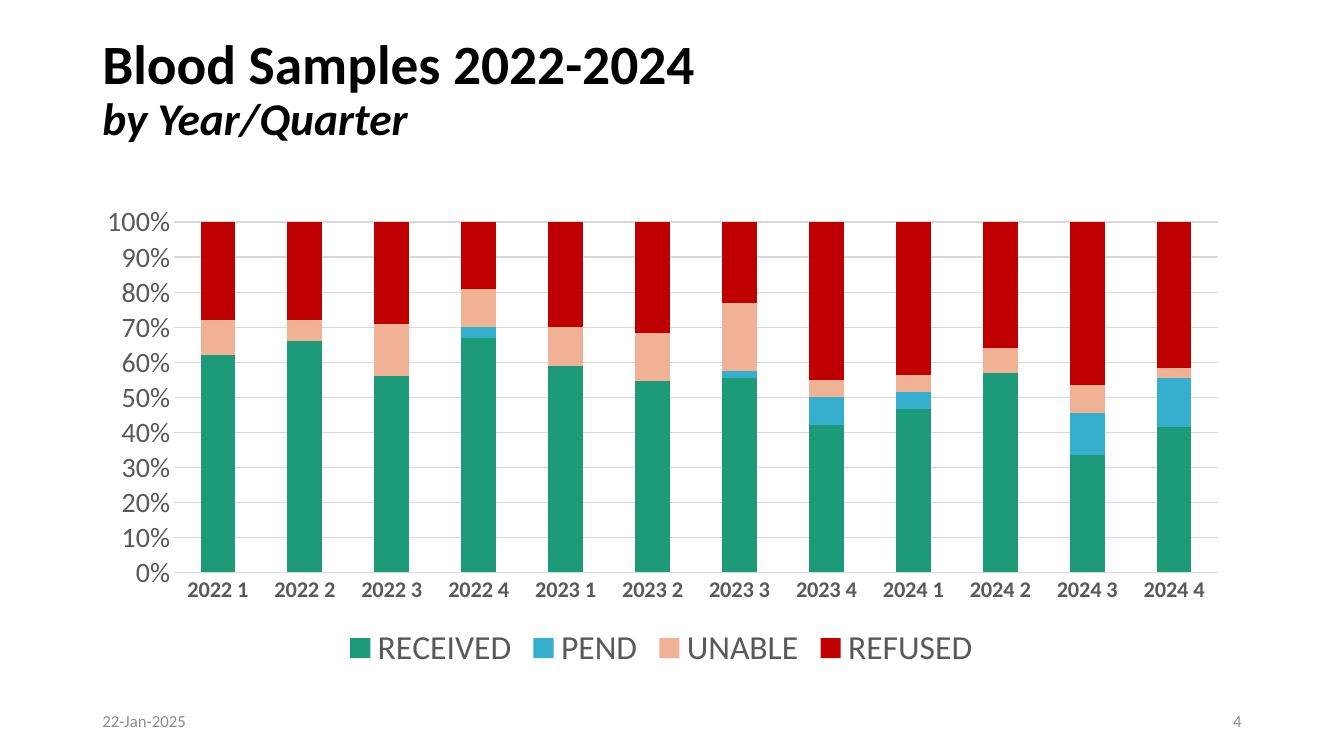
import pptx
import pptx.chart.data
import pptx.dml.color
import pptx.enum.chart
import pptx.enum.text
import pptx.oxml
import pptx.oxml.ns
import pptx.util
from pptx.util import Cm

FACE = "Calibri"
GREY = "595959"
RULE = "D9D9D9"


def paint(code):
    return pptx.dml.color.RGBColor.from_string(code)


def write(slide, box, runs, color="8C8C8C", bold=False, align="LEFT", space=1.0):
    """Add a text box; runs are (text, size, italic), one line each."""
    frame = slide.shapes.add_textbox(*[Cm(n) for n in box]).text_frame
    frame.word_wrap = True
    frame.vertical_anchor = pptx.enum.text.MSO_ANCHOR.MIDDLE
    para = frame.paragraphs[0]
    para.alignment = getattr(pptx.enum.text.PP_ALIGN, align)
    para.line_spacing = space
    for i, (text, size, slant) in enumerate(runs):
        if i:
            para.add_line_break()
        run = para.add_run()
        run.text = text
        font = run.font
        font.name, font.size = FACE, pptx.util.Pt(size)
        font.bold, font.italic = bold, slant
        font.color.rgb = paint(color)


deck = pptx.Presentation()
deck.slide_width, deck.slide_height = Cm(33.87), Cm(19.05)
slide = deck.slides.add_slide(deck.slide_layouts[6])

# Title
write(slide, (2.33, 1.02, 29.21, 2.54),
      [("Blood Samples 2022-2024", 39.6, False), ("by Year/Quarter", 32.4, True)],
      color="000000", bold=True, space=0.9)

# Chart of shares by quarter
rows = [
    ("RECEIVED", "1D9A78", (62, 66, 56, 67, 59, 55, 55, 42, 47, 57, 33, 42)),
    ("PEND", "36AFCE", (0, 0, 0, 3, 0, 0, 2, 8, 5, 0, 12, 14)),
    ("UNABLE", "F0B195", (10, 6, 15, 11, 11, 14, 19, 5, 5, 7, 8, 3)),
    ("REFUSED", "C00000", (28, 28, 29, 19, 30, 32, 23, 45, 44, 36, 46, 42)),
]
data = pptx.chart.data.CategoryChartData()
data.categories = [f"{year} {part}" for year in range(2022, 2025) for part in range(1, 5)]
for name, _, vals in rows:
    data.add_series(name, vals)
chart = slide.shapes.add_chart(
    pptx.enum.chart.XL_CHART_TYPE.COLUMN_STACKED_100,
    Cm(2.06), Cm(4.93), Cm(29.21), Cm(12.09), data).chart
chart.has_title = False
chart.font.name, chart.font.size = FACE, pptx.util.Pt(10)
chart.font.color.rgb = paint("000000")

plot = chart.plots[0]
plot.gap_width, plot.overlap = 150, 100
plot.vary_by_categories = False
for bars, (_, color, _) in zip(plot.series, rows):
    bars.format.fill.solid()
    bars.format.fill.fore_color.rgb = paint(color)

# Axes and legend
cats, vals = chart.category_axis, chart.value_axis
chart.has_legend = True
legend = chart.legend
legend.position = pptx.enum.chart.XL_LEGEND_POSITION.BOTTOM
legend.include_in_layout = False
for font, size, bold in ((cats.tick_labels.font, 16, True),
                         (vals.tick_labels.font, 20, False),
                         (legend.font, 24, False)):
    font.name, font.size, font.bold = FACE, pptx.util.Pt(size), bold
    font.color.rgb = paint(GREY)
for axis in (cats, vals):
    axis.major_tick_mark = pptx.enum.chart.XL_TICK_MARK.NONE
    axis.minor_tick_mark = pptx.enum.chart.XL_TICK_MARK.NONE
vals.has_major_gridlines = True
for line in (cats.format.line, vals.major_gridlines.format.line):
    line.color.rgb = paint(RULE)
    line.width = pptx.util.Pt(0.75)
vals.format.line.fill.background()
vals.minimum_scale, vals.maximum_scale, vals.major_unit = 0, 1, 0.1
vals.tick_labels.number_format = "0%"
vals.tick_labels.number_format_is_linked = False

# Fixed inner plot area
qn = pptx.oxml.ns.qn
area = chart.element.find(".//" + qn("c:plotArea"))
for old in area.findall(qn("c:layout")):
    area.remove(old)
marks = (("layoutTarget", "inner"), ("xMode", "edge"), ("yMode", "edge"),
         ("x", 0.08), ("y", 0.055), ("w", 0.9), ("h", 0.73))
parts = "".join(f'<c:{tag} val="{val}"/>' for tag, val in marks)
area.insert(0, pptx.oxml.parse_xml(
    f'<c:layout {pptx.oxml.ns.nsdecls("c")}>'
    f"<c:manualLayout>{parts}</c:manualLayout></c:layout>"))

# Footer
for left, text, align in ((2.33, "22-Jan-2025", "LEFT"), (23.92, "4", "RIGHT")):
    write(slide, (left, 17.65, 7.62, 1.02), [(text, 12, False)], align=align)

deck.save("out.pptx")
